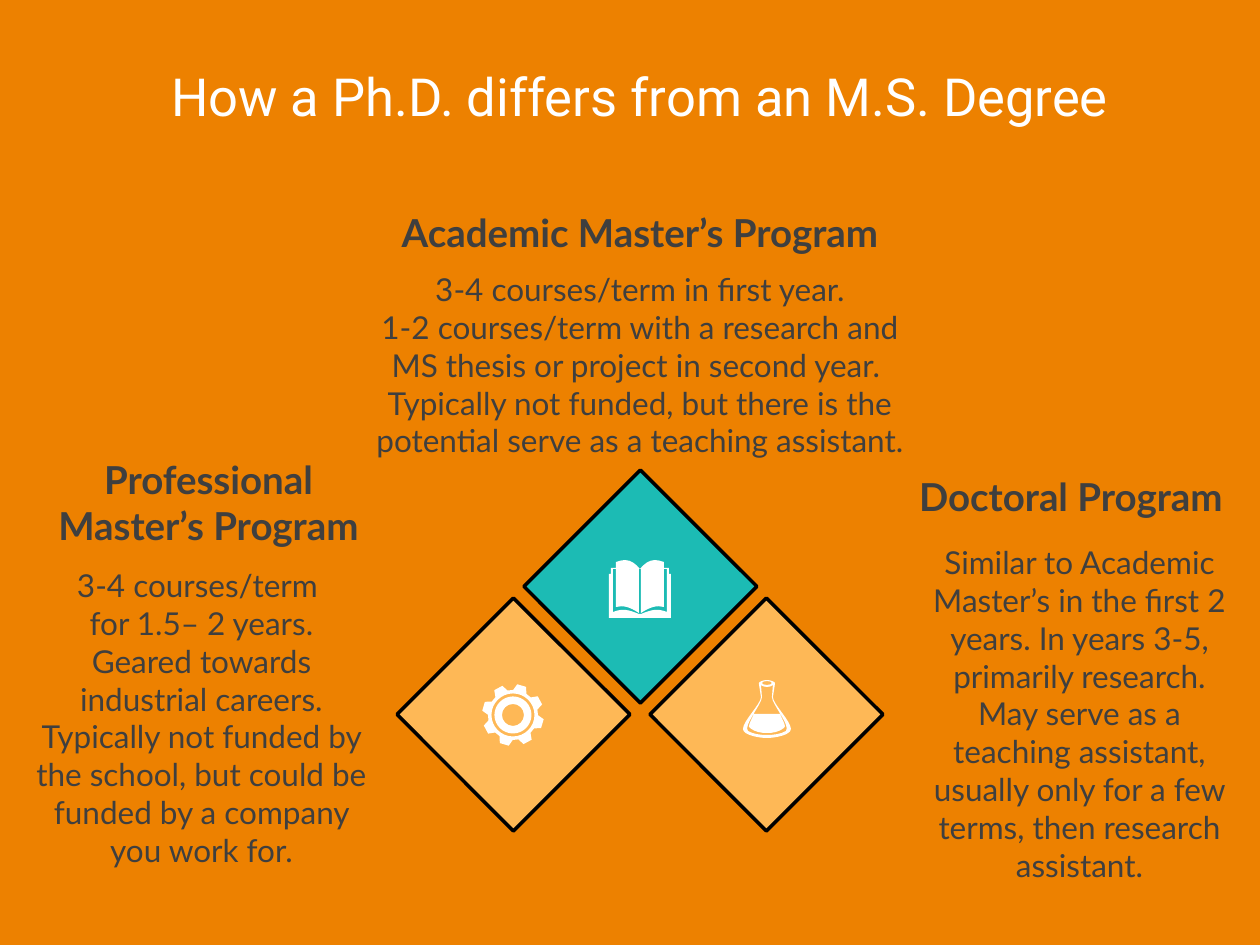
import math

import pptx
import pptx.dml.color
import pptx.enum.shapes
import pptx.enum.text
import pptx.util
from lxml import etree
from pptx.oxml.ns import qn

PX = 914400 / 126
COLORS = {"back": "ED8100", "white": "FFFFFF", "text": "3F3F3F",
          "teal": "1CBBB4", "peach": "FEB856", "line": "000000"}

TITLE = "How a Ph.D. differs from an M.S. Degree"
# heading, heading box, paragraphs, body box; boxes are left, top, width, height
PROGRAMS = [
    ("Professional Master’s Program", (41, 450, 335, 81),
     ["3-4 courses/term ",
      "for 1.5– 2 years.",
      "Geared towards industrial careers.",
      "Typically not funded by the school, but could be funded by a company "
      "you work for."],
     (13, 560, 377, 200)),
    ("Academic Master’s Program", (377, 203, 526, 53),
     ["3-4 courses/term in first year.",
      "1-2 courses/term with a research and MS thesis or project in second year. ",
      "Typically not funded, but there is the potential serve as a teaching assistant."],
     (363, 264, 554, 166)),
    ("Doctoral Program", (883, 467, 376, 47),
     ["Similar to Academic Master’s in the first 2 years. In years 3-5, primarily "
      "research. May serve as a teaching assistant, usually only for a few terms, "
      "then research assistant."],
     (911, 537, 337, 357)),
]
DIAMOND = 233
DIAMONDS = [(650, 598, "peach"), (397, 598, "peach"), (524, 470, "teal")]

# Right halves of symmetric icons: x from the axis, y on the slide.
# Each step is one point (a line) or three points (a Bézier curve).
FLASK_AXIS = 767
FLASK = [
    [[(0, 680)], [(4, 680), (8, 682), (8, 683)], [(8, 684)], [(6, 697)],
     [(6, 704), (24, 721), (24, 729)], [(24, 735), (8, 738), (0, 738)]],
    [[(0, 687)], [(3, 687), (5, 686), (6, 685)], [(5, 697)],
     [(5, 704), (24, 726), (19, 731)], [(14, 734), (7, 735), (0, 735)]],
    [[(0, 681)], [(3, 681), (5, 682), (5, 683)], [(5, 684), (3, 685), (0, 685)]],
    [[(0, 714)], [(13, 714)], [(16, 721), (20, 727), (17, 728)],
     [(12, 732), (6, 733), (0, 733)]],
]
BOOK_AXIS = 640
BOOK = [
    [[(0, 569)], [(4, 564), (9, 560), (15, 560)], [(18, 560), (21, 561), (24, 562)],
     [(24, 568)], [(29, 568)], [(29, 574)], [(31, 574)], [(31, 618)], [(0, 618)]],
    [[(0, 569)], [(1, 569)], [(1, 613)], [(10, 607), (17, 605), (24, 607)],
     [(24, 569)], [(27, 569)], [(27, 612)], [(17, 608), (11, 610), (1, 614)],
     [(0, 614)]],
]
GEAR_CENTER = (513, 715)
GEAR_TEETH, GEAR_TURN = 8, 16.5
GEAR_TOOTH = [(25, -16), (31, -8.5), (31, 8.5), (25, 16)]  # radius, degrees
GEAR_RINGS = (21.5, 18.5, 11)
ARC = 0.55  # handle length of a quarter circle, in radii


def emu(*lengths):
    return [round(v * PX) for v in lengths]


def rgb(name):
    return pptx.dml.color.RGBColor.from_string(COLORS[name])


def fill(shape, color):
    shape.fill.solid()
    shape.fill.fore_color.rgb = rgb(color)
    shape.shadow.inherit = False


def write(tf, paragraphs, font, size, color, bold=False):
    tf.word_wrap = True
    for i, text in enumerate(paragraphs):
        p = tf.paragraphs[0] if i == 0 else tf.add_paragraph()
        p.alignment = pptx.enum.text.PP_ALIGN.CENTER
        r = p.add_run()
        r.text = text
        r.font.name = font
        r.font.size = pptx.util.Pt(size)
        r.font.bold = bold
        r.font.color.rgb = rgb(color)


def mirrored(half, axis):
    """Follow the right half down and its reflection back up."""
    right = [[(axis + x, y) for x, y in step] for step in half]
    left = [[(axis - x, y) for x, y in step] for step in half]
    back = [step[-2::-1] + [before[-1]] for before, step in zip(left, left[1:])]
    return right + back[::-1]


def circle(radius):
    cx, cy = GEAR_CENTER
    steps = [[(cx + radius, cy)]]
    for x, y in [(1, 0), (0, 1), (-1, 0), (0, -1)]:
        handles = [(x - ARC * y, y + ARC * x), (ARC * x - y, ARC * y + x), (-y, x)]
        steps.append([(cx + radius * u, cy + radius * v) for u, v in handles])
    return steps


def gear():
    outline = []
    for i in range(GEAR_TEETH):
        for radius, degrees in GEAR_TOOTH:
            a = math.radians(GEAR_TURN + i * 360 / GEAR_TEETH + degrees)
            outline.append([(GEAR_CENTER[0] + radius * math.cos(a),
                             GEAR_CENTER[1] + radius * math.sin(a))])
    return [outline] + [circle(radius) for radius in GEAR_RINGS]


def add_icon(s, contours):
    """Draw the steps as lines, then join each three-point step into a curve."""
    builder = s.shapes.build_freeform(*emu(*contours[0][0][0]))
    for i, (start, *steps) in enumerate(contours):
        if i:
            builder.move_to(*emu(*start[0]))
        builder.add_line_segments([emu(*pt) for step in steps for pt in step], close=True)
    sp = builder.convert_to_shape()
    lines = iter(list(sp._element.iter(qn("a:lnTo"))))
    for contour in contours:
        for step in contour[1:]:
            parts = [next(lines) for _ in step]
            if len(parts) == 3:
                bezier = etree.Element(qn("a:cubicBezTo"))
                parts[0].addprevious(bezier)
                for part in parts:
                    bezier.append(part[0])
                    part.getparent().remove(part)
    fill(sp, "white")
    sp.line.fill.background()


def add_diamond(s, left, top, color):
    sp = s.shapes.add_shape(pptx.enum.shapes.MSO_SHAPE.DIAMOND,
                            *emu(left, top, DIAMOND, DIAMOND))
    fill(sp, color)
    sp.line.color.rgb = rgb("line")
    sp.line.width = pptx.util.Pt(2)
    etree.SubElement(sp.line._get_or_add_ln(), qn("a:round"))


def add_title(s):
    sp = s.shapes.title
    sp.left, sp.top, sp.width, sp.height = emu(10, 31, 1260, 130)
    tf = sp.text_frame
    tf.auto_size = pptx.enum.text.MSO_AUTO_SIZE.NONE
    tf.vertical_anchor = pptx.enum.text.MSO_ANCHOR.MIDDLE
    write(tf, [TITLE], "Roboto", 30, "white")


def main():
    prs = pptx.Presentation()
    prs.slide_width, prs.slide_height = emu(1260, 945)
    s = prs.slides.add_slide(prs.slide_layouts[5])
    s.background.fill.solid()
    s.background.fill.fore_color.rgb = rgb("back")
    add_title(s)
    for heading, heading_box, body, body_box in PROGRAMS:
        tf = s.shapes.add_textbox(*emu(*body_box)).text_frame
        write(tf, body, "Lato", 18, "text")
        tf = s.shapes.add_textbox(*emu(*heading_box)).text_frame
        write(tf, [heading], "Lato", 22, "text", bold=True)
    for diamond in DIAMONDS:
        add_diamond(s, *diamond)
    add_icon(s, gear())
    add_icon(s, [mirrored(half, FLASK_AXIS) for half in FLASK])
    add_icon(s, [mirrored(half, BOOK_AXIS) for half in BOOK])
    prs.save("out.pptx")


if __name__ == "__main__":
    main()
